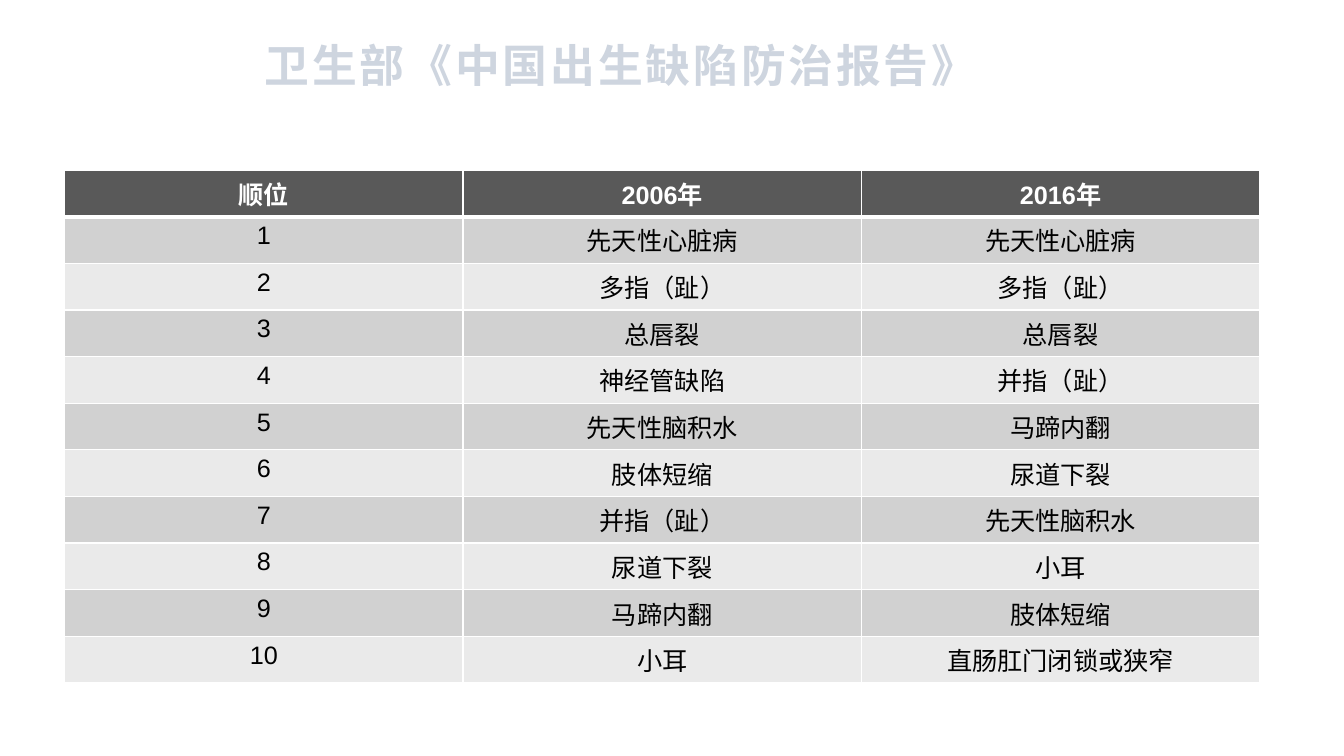
from dataclasses import dataclass
from lxml.etree import SubElement
from pptx import Presentation
from pptx.dml.color import RGBColor as RGB
from pptx.enum.text import MSO_ANCHOR as Anchor, PP_ALIGN as Align
from pptx.oxml import parse_xml
from pptx.oxml.ns import qn
from pptx.util import Cm, Pt


@dataclass
class Theme:
    latin: str = "Arial"
    han: str = "Noto Sans CJK SC"
    title: str = "CED5DF"
    edge: str = "8496B0"
    head: str = "595959"
    bands: tuple = ("D1D1D1", "EAEAEA")
    white: str = "FFFFFF"
    black: str = "000000"
    title_size: int = 32
    cell_size: int = 18


def style(run, face, size, color, bold):
    font = run.font
    font.name, font.size, font.bold = face, Pt(size), bold
    font.color.rgb = RGB.from_string(color)
    SubElement(run._r.get_or_add_rPr(), qn("a:ea"), typeface=theme.han)


def line(tag, width, color):
    return parse_xml(
        f'<a:{tag} xmlns:a="http://schemas.openxmlformats.org/drawingml/2006/main" '
        f'w="{Pt(width)}"><a:solidFill><a:srgbClr val="{color}"/></a:solidFill></a:{tag}>')


theme = Theme()
deck = Presentation()
deck.slide_width, deck.slide_height = Cm(33.87), Cm(19.05)
slide = deck.slides.add_slide(deck.slide_layouts[6])

# Title
box = slide.shapes.add_textbox(Cm(2.74), Cm(0.84), Cm(25.73), Cm(1.6))
frame = box.text_frame
frame.word_wrap = True
frame.vertical_anchor = Anchor.MIDDLE
frame.margin_left, frame.margin_right = Cm(0.28), Cm(0.2)
frame.margin_top = frame.margin_bottom = Cm(0.1)
frame.text = "卫生部《中国出生缺陷防治报告》"
para = frame.paragraphs[0]
para.alignment = Align.CENTER
run = para.runs[0]
style(run, theme.han, theme.title_size, theme.title, True)
props = run._r.get_or_add_rPr()
props.set("spc", "200")
props.insert(0, line("ln", 1.75, theme.edge))

# Ranking data
ranks = [
    ("先天性心脏病", "先天性心脏病"),
    ("多指（趾）", "多指（趾）"),
    ("总唇裂", "总唇裂"),
    ("神经管缺陷", "并指（趾）"),
    ("先天性脑积水", "马蹄内翻"),
    ("肢体短缩", "尿道下裂"),
    ("并指（趾）", "先天性脑积水"),
    ("尿道下裂", "小耳"),
    ("马蹄内翻", "肢体短缩"),
    ("小耳", "直肠肛门闭锁或狭窄"),
]
rows = [("顺位", "2006年", "2016年")]
rows += [(str(n), *pair) for n, pair in enumerate(ranks, 1)]

# Table
top, body = Cm(1.16), Cm(11.75)
table = slide.shapes.add_table(
    len(rows), 3, Cm(1.63), Cm(4.3), Cm(30.12), top + body).table
for col in table.columns:
    col.width = Cm(10.04)
for i, row in enumerate(rows):
    head = i == 0
    table.rows[i].height = top if head else body // len(ranks)
    fill = theme.head if head else theme.bands[(i - 1) % 2]
    for j, text in enumerate(row):
        cell = table.cell(i, j)
        cell.text = text
        para = cell.text_frame.paragraphs[0]
        para.alignment = Align.CENTER
        style(para.runs[0], theme.latin, theme.cell_size,
              theme.white if head else theme.black, head)
        # Borders, thicker around the header's lower edge
        props = cell._tc.get_or_add_tcPr()
        for side in "LRTB":
            thick = (i, side) in ((0, "B"), (1, "T"))
            props.append(line(f"ln{side}", 3 if thick else 1, theme.white))
        cell.fill.solid()
        cell.fill.fore_color.rgb = RGB.from_string(fill)

deck.save("out.pptx")
